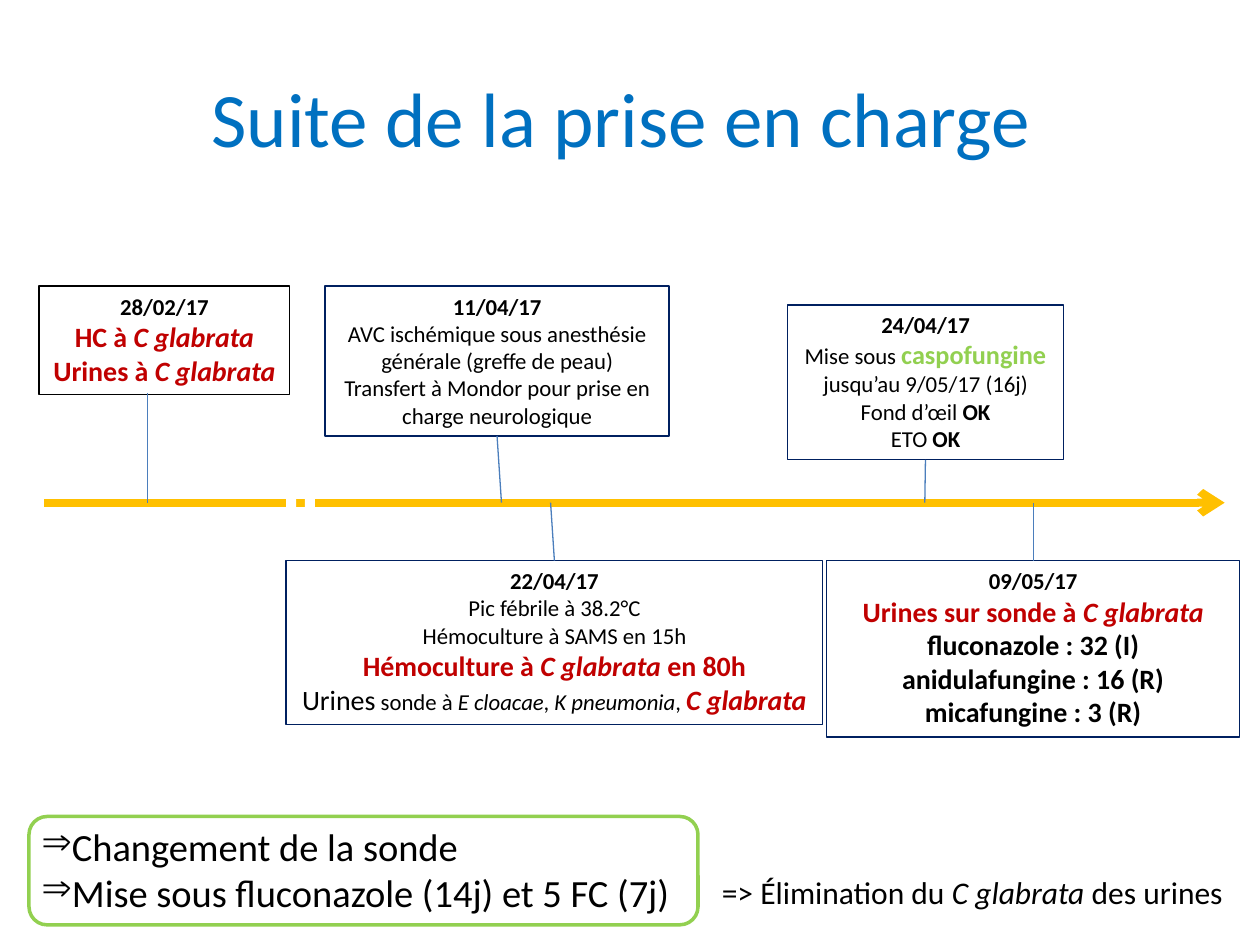
from dataclasses import dataclass

from lxml.etree import SubElement
from pptx import Presentation
from pptx.dml.color import RGBColor as RGB
from pptx.enum.shapes import MSO_CONNECTOR as Link, MSO_SHAPE as Kind
from pptx.enum.text import MSO_ANCHOR as Anchor, MSO_AUTO_SIZE as Fit, PP_ALIGN as Align
from pptx.oxml.ns import qn
from pptx.util import Inches, Pt

WIDE, HIGH = Inches(10), Inches(7.5)


@dataclass(frozen=True)
class Theme:
    font: str = "Calibri"
    title: str = "0070C0"
    black: str = "000000"
    white: str = "FFFFFF"
    red: str = "C00000"
    green: str = "92D050"
    gold: str = "FFC000"
    navy: str = "002060"
    blue: str = "4B7EBC"
    head: int = 44
    step: int = 22
    end: int = 18
    big: int = 16
    mid: int = 15
    small: int = 13
    thin: float = 0.75
    edge: float = 2
    bar: float = 4.5


T = Theme()
# size, colour, bold, italic
LOOKS = {
    "title": (T.head, T.title, False, False),
    "date": (T.small, T.black, True, False),
    "plain": (T.small, T.black, False, False),
    "latin": (T.small, T.black, False, True),
    "alert": (T.big, T.red, True, False),
    "germ": (T.big, T.red, True, True),
    "drug": (T.mid, T.green, True, False),
    "test": (T.big, T.black, True, False),
    "large": (T.big, T.black, False, False),
    "step": (T.step, T.black, False, False),
    "end": (T.end, T.black, False, False),
    "endgerm": (T.end, T.black, False, True),
}
AXIS = 53.2
TOP, LOW = 30.27, 59.33

# place (percent of slide), wrap, line colour, rows of (text, look)
FIRST = ((3.1, TOP, 19.9, 11.47), False, T.black, [
    [("28/02/17", "date")],
    [("HC à ", "alert"), ("C glabrata", "germ")],
    [("Urines à ", "alert"), ("C glabrata", "germ")]])
STROKE = ((25.8, TOP, 27.3, 15.87), True, T.navy, [
    [("11/04/17", "date")],
    [("AVC ischémique sous anesthésie générale (greffe de peau)", "plain")],
    [("Transfert à Mondor pour prise en charge neurologique", "plain")]])
FEVER = ((22.7, LOW, 42.6, 17.33), False, T.navy, [
    [("22/04/17", "date")],
    [("Pic fébrile à 38.2°C", "plain")],
    [("Hémoculture à SAMS en 15h", "plain")],
    [("Hémoculture à ", "alert"), ("C glabrata ", "germ"), ("en 80h", "alert")],
    [("Urines", "large"), (" sonde à ", "plain"), ("E cloacae", "latin"),
     (", ", "plain"), ("K pneumonia", "latin"), (", ", "plain"),
     ("C glabrata", "germ")]])
CARE = ((62.5, 32.27, 21.9, 16.4), True, T.navy, [
    [("24/04/17", "date")],
    [("Mise sous ", "plain"), ("caspofungine", "drug")],
    [("jusqu’au 9/05/17 (16j) Fond d’œil ", "plain"), ("OK", "date")],
    [("ETO ", "plain"), ("OK", "date")]])
CHECK = ((65.6, LOW, 32.8, 18.67), True, T.navy, [
    [("09/05/17", "date")],
    [("Urines sur sonde à ", "alert"), ("C glabrata", "germ")],
    [("fluconazole : 32 (I)", "test")],
    [("anidulafungine : 16 (R)", "test")],
    [("micafungine : 3 (R)", "test")]])
STEPS = [[("Changement de la sonde", "step")],
         [("Mise sous fluconazole (14j) et 5 FC (7j)", "step")]]
RESULT = [[("=> Élimination du ", "end"), ("C glabrata ", "endgerm"),
           ("des urines", "end")]]


def area(x, y, w, h):
    """Turn percents of the slide into lengths."""
    return [int(side * part / 100)
            for side, part in zip((WIDE, HIGH, WIDE, HIGH), (x, y, w, h))]


def write(frame, rows, align):
    for n, row in enumerate(rows):
        para = frame.paragraphs[0] if n == 0 else frame.add_paragraph()
        para.alignment = align
        for text, look in row:
            run = para.add_run()
            run.text = text
            font = run.font
            size, tint, font.bold, font.italic = LOOKS[look]
            font.name, font.size = T.font, Pt(size)
            font.color.rgb = RGB.from_string(tint)


def stroke(line, tint, width):
    line.color.rgb = RGB.from_string(tint)
    line.width = Pt(width)


def add_text(slide, place, rows, wrap=False, align=Align.LEFT):
    box = slide.shapes.add_textbox(*area(*place))
    frame = box.text_frame
    frame.word_wrap = wrap
    frame.auto_size = Fit.SHAPE_TO_FIT_TEXT
    write(frame, rows, align)
    return box


def add_event(slide, event):
    place, wrap, tint, rows = event
    box = add_text(slide, place, rows, wrap, Align.CENTER)
    stroke(box.line, tint, T.thin)
    return box


def add_line(slide, x1, y1, x2, y2, tint=T.blue, width=T.thin):
    line = slide.shapes.add_connector(Link.STRAIGHT, *area(x1, y1, x2, y2))
    stroke(line.line, tint, width)
    SubElement(line._element.spPr, qn("a:effectLst"))
    return line


def add_axis(slide):
    line = add_line(slide, 3.5, AXIS, 97.2, AXIS, T.gold, T.bar)
    SubElement(line.line._get_or_add_ln(), qn("a:tailEnd"), type="arrow")
    for left in (22.7, 24.2):
        gap = slide.shapes.add_shape(Kind.RECTANGLE, *area(left, 52.13, 0.8, 2.13))
        gap.shadow.inherit = False
        gap.fill.solid()
        gap.fill.fore_color.rgb = RGB.from_string(T.white)
        gap.line.fill.background()


def add_steps(slide):
    box = add_text(slide, (2.3, 86.4, 53, 11.2), STEPS)
    for para in box.text_frame.paragraphs:
        props = para._p.get_or_add_pPr()
        props.set("marL", str(Inches(0.23)))
        props.set("indent", str(-Inches(0.23)))
        SubElement(props, qn("a:buChar"), char="⇒")
    ring = slide.shapes.add_shape(Kind.ROUNDED_RECTANGLE,
                                  *area(2.3, 86.4, 53.1, 11.47))
    ring.shadow.inherit = False
    ring.fill.background()
    stroke(ring.line, T.green, T.edge)


def add_title(slide):
    title = slide.shapes.title
    title.left, title.top, title.width, title.height = area(5, 4, 90, 16.67)
    title.text_frame.vertical_anchor = Anchor.MIDDLE
    write(title.text_frame, [[("Suite de la prise en charge ", "title")]],
          Align.CENTER)


def main():
    deck = Presentation()
    deck.slide_width, deck.slide_height = WIDE, HIGH
    slide = deck.slides.add_slide(deck.slide_layouts[5])
    add_title(slide)
    add_axis(slide)
    add_event(slide, FIRST)
    add_line(slide, 11.7, 41.6, 11.7, AXIS)
    # box, side joined, place on the axis
    for event, side, x in ((STROKE, 2, 39.8), (FEVER, 0, 43.7),
                           (CARE, 2, 73.4), (CHECK, 0, 82)):
        box = add_event(slide, event)
        add_line(slide, x, AXIS, x, AXIS).begin_connect(box, side)
    add_steps(slide)
    add_text(slide, (56.3, 91.73, 41.9, 5.33), RESULT)
    deck.save("out.pptx")


if __name__ == "__main__":
    main()
